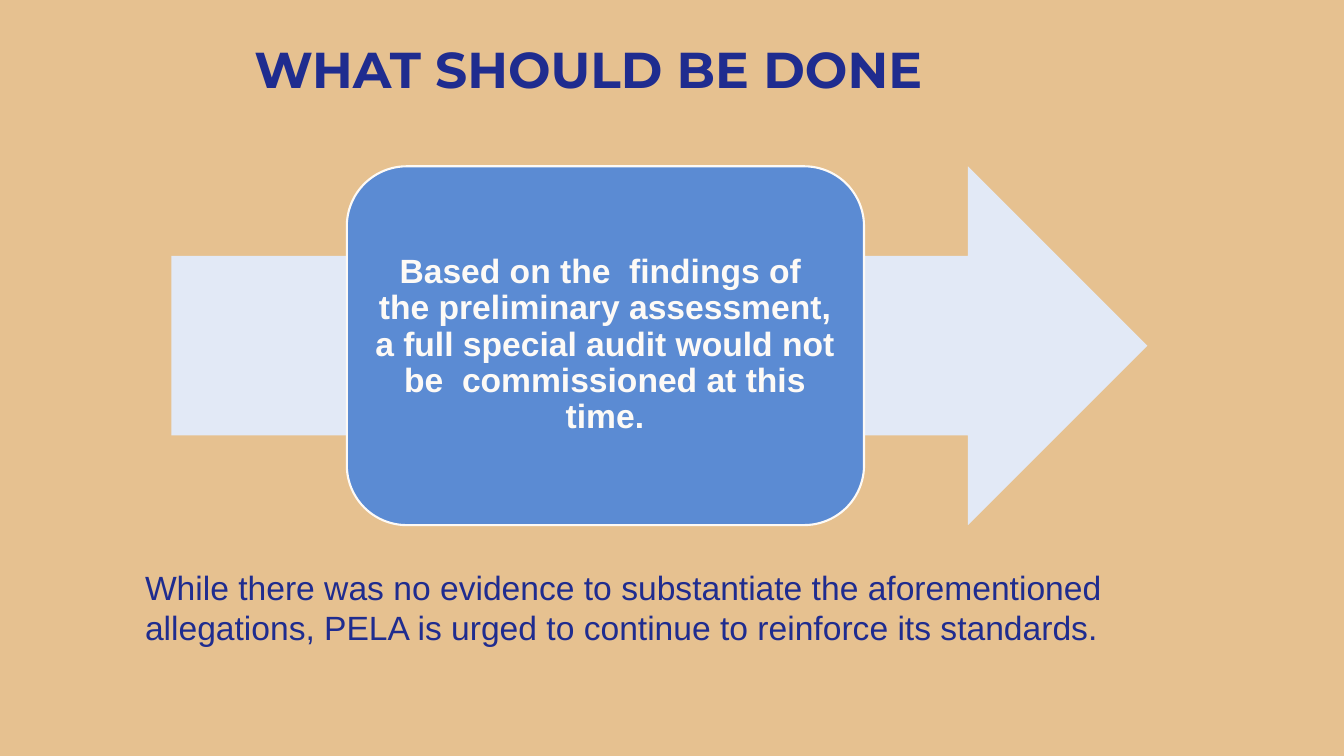
from pptx import Presentation
from pptx.dml.color import RGBColor
from pptx.enum.shapes import MSO_SHAPE
from pptx.enum.text import MSO_ANCHOR, PP_ALIGN
from pptx.util import Inches, Pt

COLORS = {
    "sand": "E6C190",
    "navy": "1F2C8F",
    "pale": "E2E9F6",
    "blue": "5B8BD3",
    "cream": "FDFAF6",
}


def color(name):
    return RGBColor.from_string(COLORS[name])


def write(frame, text, *, ink, size=24, font="Arial", bold=False,
          align=PP_ALIGN.LEFT, anchor=MSO_ANCHOR.TOP, spacing=None):
    frame.word_wrap = True
    frame.vertical_anchor = anchor
    para = frame.paragraphs[0]
    para.alignment = align
    para.line_spacing = spacing
    span = para.add_run()
    span.text = text
    span.font.name = font
    span.font.size = Pt(size)
    span.font.bold = bold
    span.font.color.rgb = color(ink)


class SlideBuilder:
    """Holds the current page and the look shared by its elements."""

    outline_width = Pt(1.5)

    def __init__(self, page, background):
        self.page = page
        page.background.fill.solid()
        page.background.fill.fore_color.rgb = color(background)

    def shape(self, kind, left, top, width, height, fill, line=None):
        shape = self.page.shapes.add_shape(
            kind, Inches(left), Inches(top), Inches(width), Inches(height))
        shape.shadow.inherit = False
        shape.fill.solid()
        shape.fill.fore_color.rgb = color(fill)
        if line:
            shape.line.color.rgb = color(line)
            shape.line.width = self.outline_width
        else:
            shape.line.fill.background()
        return shape

    def text(self, left, top, width, height, text, inset=None, **style):
        box = self.page.shapes.add_textbox(
            Inches(left), Inches(top), Inches(width), Inches(height))
        frame = box.text_frame
        if inset is not None:
            frame.margin_left = frame.margin_right = Inches(inset)
            frame.margin_top = frame.margin_bottom = Inches(inset)
        write(frame, text, **style)


def main():
    deck = Presentation()
    deck.slide_width, deck.slide_height = Inches(13.33), Inches(7.5)
    builder = SlideBuilder(deck.slides.add_slide(deck.slide_layouts[6]), "sand")
    centered = {"bold": True, "align": PP_ALIGN.CENTER, "anchor": MSO_ANCHOR.MIDDLE}

    builder.text(0, 0.22, 11.67, 0.84, "WHAT SHOULD BE DONE", ink="navy",
                 size=36, font="Montserrat", spacing=Pt(48.8), **centered)

    band_top, band_height = 1.65, 3.56
    builder.shape(MSO_SHAPE.RIGHT_ARROW, 1.7, band_top, 9.68, band_height, "pale")
    builder.shape(MSO_SHAPE.ROUNDED_RECTANGLE, 3.44, band_top, 5.13, band_height,
                  "blue", line="cream")
    builder.text(3.61, 1.82, 4.78, 3.21,
                 "Based on the  findings of  the preliminary assessment, a full "
                 "special audit would not be  commissioned at this time.",
                 inset=0.1, ink="cream", spacing=0.9, **centered)

    builder.text(1.34, 5.57, 10.97, 1.21,
                 "While there was no evidence to substantiate the aforementioned "
                 "allegations, PELA is urged to continue to reinforce its standards.",
                 ink="navy")

    deck.save("out.pptx")


if __name__ == "__main__":
    main()
